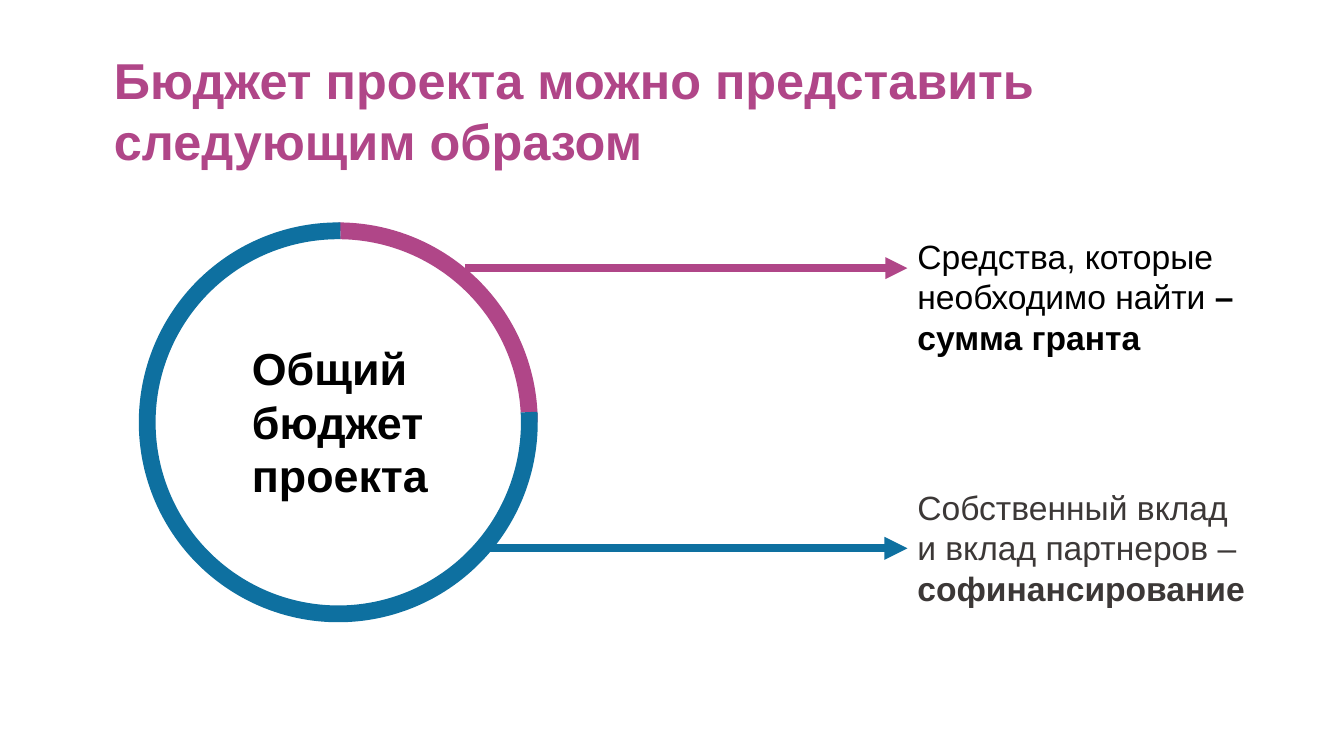
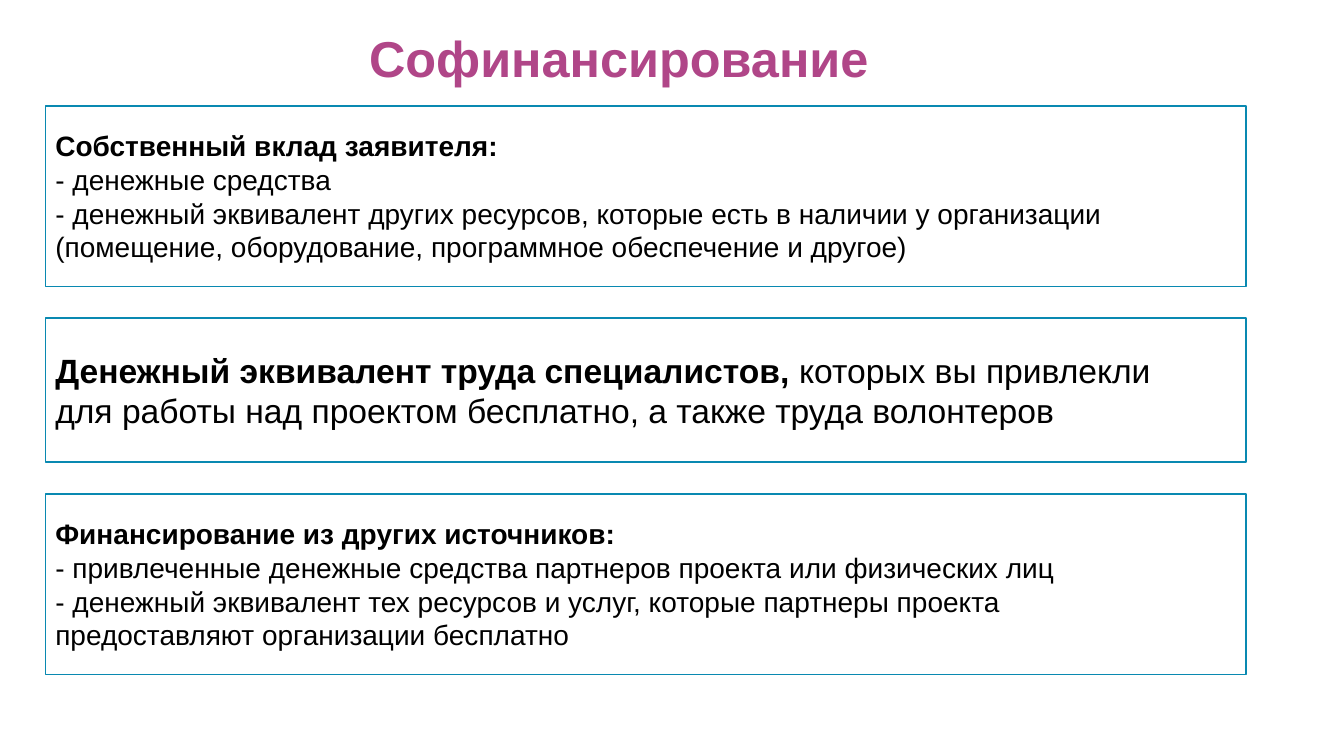
from lxml import etree
from pptx import Presentation
from pptx import util as u
from pptx.dml import color
from pptx.enum import shapes, text
from pptx.oxml import ns

FONT = "Arial"
PINK, BLUE, TEAL = "B04688", "0E70A0", "0989B1"
BLACK, GREY, WHITE = "000000", "3C3837", "FFFFFF"
TITLE_ONLY = 5


def rgb(value):
    return color.RGBColor.from_string(value)


def inches(*lengths):
    return [u.Inches(length) for length in lengths]


def style_line(shape, ink, width):
    shape.line.color.rgb = rgb(ink)
    shape.line.width = u.Pt(width)


def write(frame, lines, size, ink, anchor=text.MSO_ANCHOR.TOP):
    """Each line is a list of (wording, bold) pairs."""
    frame.word_wrap = True
    frame.auto_size = text.MSO_AUTO_SIZE.NONE
    frame.vertical_anchor = anchor
    for index, line in enumerate(lines):
        para = frame.add_paragraph() if index else frame.paragraphs[0]
        para.alignment = text.PP_ALIGN.LEFT
        for wording, bold in line:
            span = para.add_run()
            span.text = wording
            span.font.name = FONT
            span.font.size = u.Pt(size)
            span.font.bold = bold
            span.font.color.rgb = rgb(ink)


def add_page(deck, title, box):
    page = deck.slides.add_slide(deck.slide_layouts[TITLE_ONLY])
    holder = page.shapes.title
    holder.left, holder.top, holder.width, holder.height = inches(*box)
    write(holder.text_frame, [[(title, True)]], 36, PINK)
    return page


def add_label(page, box, lines, size, ink):
    label = page.shapes.add_textbox(*inches(*box))
    write(label.text_frame, lines, size, ink)


def add_panel(page, box, lines, size):
    panel = page.shapes.add_shape(shapes.MSO_SHAPE.RECTANGLE, *inches(*box))
    panel.shadow.inherit = False
    panel.fill.solid()
    panel.fill.fore_color.rgb = rgb(WHITE)
    style_line(panel, TEAL, 1)
    write(panel.text_frame, lines, size, BLACK, text.MSO_ANCHOR.MIDDLE)


def add_arc(page, box, start, end, ink):
    """Angles are degrees, clockwise from three o'clock."""
    arc = page.shapes.add_shape(shapes.MSO_SHAPE.ARC, *inches(*box))
    arc.shadow.inherit = False
    # One adjustment unit is 100000 steps; a degree is 60000 steps
    arc.adjustments[0] = start * 0.6
    arc.adjustments[1] = end * 0.6
    arc.fill.solid()
    arc.fill.fore_color.rgb = rgb(WHITE)
    style_line(arc, ink, 12)


def add_arrow(page, left, right, y, ink, width):
    arrow = page.shapes.add_connector(
        shapes.MSO_CONNECTOR.STRAIGHT, *inches(left, y, right, y))
    style_line(arrow, ink, width)
    etree.SubElement(arrow.line._get_or_add_ln(), ns.qn("a:tailEnd"), type="triangle")
    etree.SubElement(arrow._element.spPr, ns.qn("a:effectLst"))


def add_budget_ring(page, box):
    left, top, width, height = box
    add_arc(page, box, 270, 0, PINK)
    add_arc(page, box, 356.93, 270.61, BLUE)
    # Arrows from the ring to the labels
    label_left = left + 7.54
    add_arrow(page, left + 3.15, label_left, top + 0.37, PINK, 5.25)
    add_arrow(page, left + 3.39, label_left, top + 3.15, BLUE, 5.5)
    # Wording in the middle of the ring
    add_label(page, (left + 0.94, top + 1.04, 2.04, 1.72),
              [[(word, True)] for word in ("Общий", "бюджет", "проекта")], 32, BLACK)
    # Labels at the arrowheads
    add_label(page, (label_left, top, 3.61, 1.31), [
        [("Средства, которые", False)],
        [("необходимо найти ", False), ("–", True)],
        [("сумма гранта", True)]], 24, BLACK)
    add_label(page, (label_left, top + 2.49, 3.48, 1.31), [
        [("Собственный вклад", False)],
        [("и вклад партнеров –", False)],
        [("софинансирование", True)]], 24, GREY)


def add_panel_stack(page, box, panels):
    """Spread the panels over the box with equal gaps."""
    left, top, width, height = box
    gap = (height - sum(panel[0] for panel in panels)) / (len(panels) - 1)
    for panel_height, size, lines in panels:
        add_panel(page, (left, top, width, panel_height), lines, size)
        top += panel_height + gap


def build_budget(deck):
    page = add_page(deck, "Бюджет проекта можно представить следующим образом",
                    (1.03, 0.44, 9.79, 1.31))
    add_budget_ring(page, (1.46, 2.29, 3.79, 3.8))


def build_cofinancing(deck):
    page = add_page(deck, "Софинансирование", (3.56, 0.22, 5.69, 0.71))
    add_panel_stack(page, (0.45, 1.05, 11.91, 5.64), [
        (1.79, 20, [
            [("Собственный вклад заявителя:", True)],
            [("- денежные средства", False)],
            [("- денежный эквивалент других ресурсов, которые есть в наличии у организации "
              "(помещение, оборудование, программное обеспечение и другое)", False)]]),
        (1.43, 24, [
            [("Денежный эквивалент труда специалистов, ", True),
             ("которых вы привлекли", False)],
            [("для работы над проектом бесплатно, а также труда волонтеров", False)]]),
        (1.79, 20, [
            [("Финансирование из других источников:", True)],
            [("- привлеченные денежные средства партнеров проекта или физических лиц", False)],
            [("- денежный эквивалент тех ресурсов и услуг, которые партнеры проекта", False)],
            [("предоставляют организации бесплатно", False)]]),
    ])


def main():
    deck = Presentation()
    deck.slide_width, deck.slide_height = inches(13.33, 7.5)
    build_budget(deck)
    build_cofinancing(deck)
    deck.save("out.pptx")


if __name__ == "__main__":
    main()
